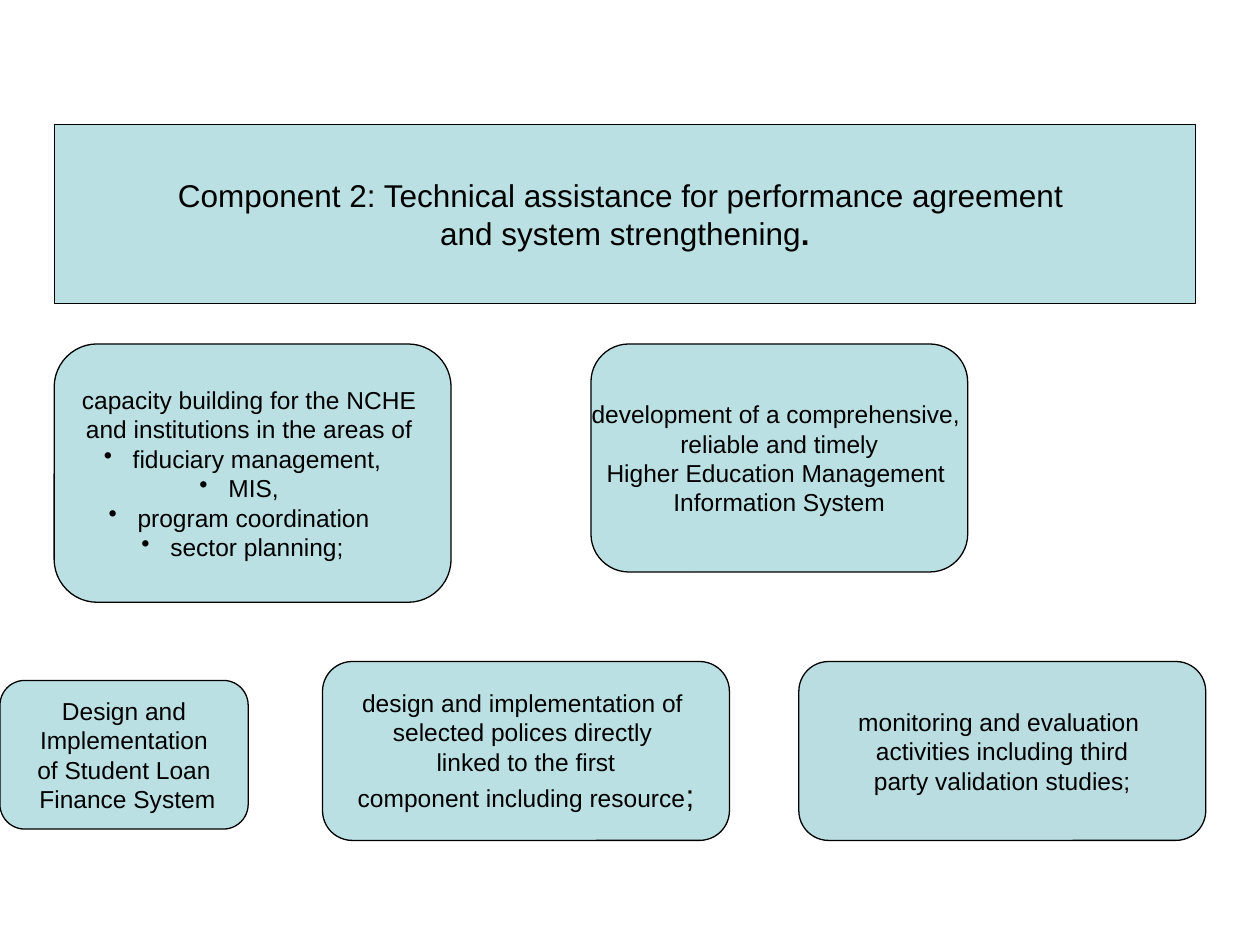
from lxml.etree import SubElement
from pptx import Presentation
from pptx.dml.color import RGBColor
from pptx.enum.shapes import MSO_SHAPE
from pptx.enum.text import MSO_ANCHOR, MSO_AUTO_SIZE, PP_ALIGN
from pptx.oxml.ns import qn
from pptx.util import Inches, Pt

BLACK = RGBColor(0x00, 0x00, 0x00)
TEAL = RGBColor(0xBB, 0xE0, 0xE3)
DIM = RGBColor(0xBA, 0xDD, 0xE1)


def style(shape, color, lines, size):
    shape.fill.solid()
    shape.fill.fore_color.rgb = color
    shape.line.color.rgb = BLACK
    shape.line.width = Pt(0.75)
    frame = shape.text_frame
    frame.auto_size = MSO_AUTO_SIZE.NONE
    frame.word_wrap = False
    frame.vertical_anchor = MSO_ANCHOR.MIDDLE
    frame.text = "\n".join(lines)
    for para in frame.paragraphs:
        para.alignment = PP_ALIGN.CENTER
        para.font.name = "Arial"
        para.font.size = Pt(size)
        para.font.color.rgb = BLACK
    return frame.paragraphs


def add_end(para, text):
    run = para.add_run()
    run.text = text
    run.font.name = "Arial"
    run.font.color.rgb = BLACK
    run.font.size = Pt(18)
    return run


deck = Presentation()
deck.slide_width, deck.slide_height = Inches(10), Inches(7.5)
slide = deck.slides.add_slide(deck.slide_layouts[5])

title = slide.shapes.title
title.left, title.top = Inches(0.43), Inches(0.99)
title.width, title.height = Inches(9.06), Inches(1.42)
heading = style(title, TEAL, [
    "Component 2: Technical assistance for performance agreement ",
    "and system strengthening"], 18)
add_end(heading[-1], ".").font.bold = True

boxes = [
    (0, 5.4, 1.97, 1.18, TEAL, [
        "Design and", " Implementation ", "of Student Loan", " Finance System"]),
    (0.43, 2.73, 3.15, 2.05, TEAL, [
        "capacity building for the NCHE ", "and institutions in the areas of ",
        "fiduciary management,", "MIS, ", "program coordination ",
        "sector planning;"]),
    (4.69, 2.73, 2.99, 1.81, TEAL, [
        "development of a comprehensive, ", "reliable and timely",
        "Higher Education Management ", "Information System"]),
    (6.34, 5.25, 3.23, 1.42, DIM, [
        "monitoring and evaluation ", "activities including third",
        "party validation studies;"]),
    (2.56, 5.25, 3.23, 1.42, TEAL, [
        "design and implementation of ", "selected polices directly ",
        "linked to the first", "component including resource"]),
]
texts = []
for left, top, width, height, color, lines in boxes:
    box = slide.shapes.add_shape(
        MSO_SHAPE.FLOWCHART_ALTERNATE_PROCESS,
        Inches(left), Inches(top), Inches(width), Inches(height))
    box.shadow.inherit = False
    texts.append(style(box, color, lines, 14))

for para in texts[1][2:]:
    props = para._p.get_or_add_pPr()
    props.set("marL", str(Inches(0.07)))
    props.set("indent", str(-Inches(0.23)))
    bullet = SubElement(props, qn("a:buChar"))
    bullet.set("char", "•")
    props.remove(bullet)
    props.insert(0, bullet)

add_end(texts[4][-1], ";")

deck.save("out.pptx")
